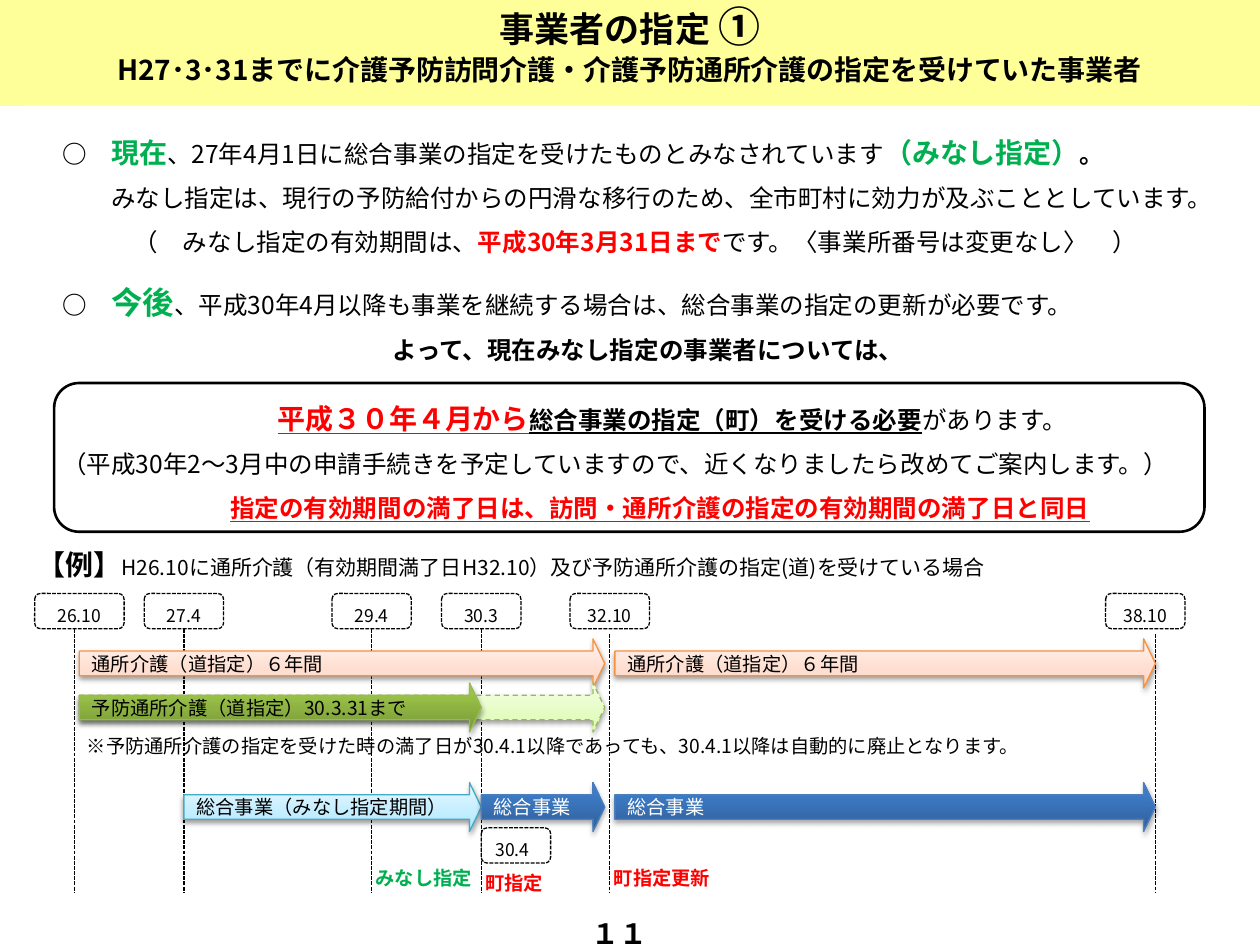
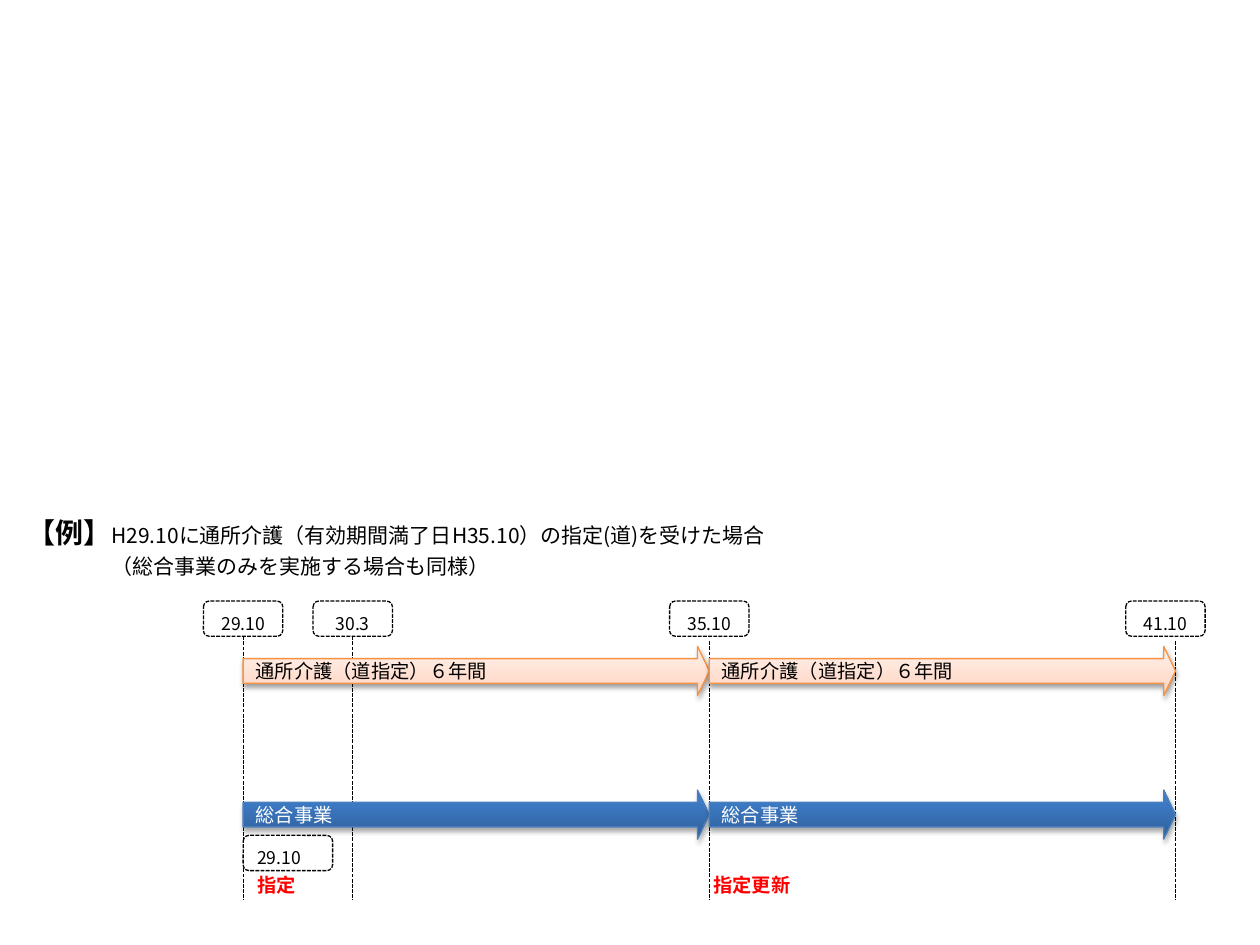
import copy
import dataclasses

import lxml.etree
import pptx
import pptx.dml.color
import pptx.enum.dml
import pptx.enum.shapes
import pptx.enum.text
import pptx.oxml.ns
import pptx.util


@dataclasses.dataclass(frozen=True)
class Theme:
    font: str = "Noto Sans CJK JP"
    page_font: str = "Calibri"
    black: str = "000000"
    white: str = "FFFFFF"
    red: str = "FF0000"
    green: str = "00B050"
    band: str = "FFFF99"
    title: int = 20
    circled: int = 24
    strong: int = 18
    lead: int = 16
    body: int = 14
    example: int = 12
    label: int = 11
    date: int = 10
    title_line: int = 20
    body_line: int = 25
    label_line: int = 17


THEME = Theme()


@dataclasses.dataclass(frozen=True)
class Span:
    text: str
    size: float = THEME.body
    colour: str = THEME.black
    bold: bool = False
    underline: bool = False
    font: str = THEME.font


@dataclasses.dataclass(frozen=True)
class Para:
    spans: tuple
    line: float = None
    centred: bool = False
    indent: float = 0
    before: float = 0


@dataclasses.dataclass(frozen=True)
class Milestone:
    text: str
    x: float
    box_shift: float = 0
    box_width: float = 0.63
    line_top: float = 0.28


@dataclasses.dataclass(frozen=True)
class ArrowStyle:
    stops: tuple
    outline: str
    text: str = THEME.black
    dashed: bool = False
    shadow: tuple = (38, 1.6)


PALE = (0, 0.35, 1)
DEEP = (0, 0.8, 1)
ARROW_STYLES = {
    "care": ArrowStyle(tuple(zip(PALE, ("FFD2BD", "FFDED0", "FFF2ED"))), "F69240"),
    "lapsed": ArrowStyle(tuple(zip(PALE, ("DAFDA7", "E4FCC2", "F5FFE7"))), "98B955", dashed=True),
    "prevention": ArrowStyle(tuple(zip(DEEP, ("779737", "9BC348", "9DC746"))), "98B955", shadow=(35, 1.8)),
    "deemed": ArrowStyle(tuple(zip(PALE, ("A7E6FF", "C1EDFF", "E7F8FF"))), "46AAC5"),
    "project": ArrowStyle(tuple(zip(DEEP, ("2F5F99", "3D7CC7", "3A7CCB"))), "4B7EBC", THEME.white, shadow=(35, 1.8)),
}

ROWS = {"care": 0.36, "prevention": 0.71, "note": 1.03, "project": 1.5, "start": 1.86, "label": 2.09}
LINE_END = 2.37
DATE_HEIGHT = 0.28
ARROW_HEIGHT = 0.39
GAP = 0.04
CARE = "通所介護（道指定）６年間"
PROJECT = "総合事業"

TITLE = [
    Para((Span("事業者の指定 ", THEME.title, bold=True), Span("①", THEME.circled, bold=True)),
         THEME.title_line, True),
    Para((Span("H27･3･31までに介護予防訪問介護・介護予防通所介護の指定を受けていた事業者", THEME.lead, bold=True),),
         THEME.title_line, True),
]

BODY = [
    Para((Span("○　", bold=True),
          Span("現在", THEME.lead, THEME.green, True),
          Span("、27年4月1日に総合事業の指定を受けたものとみなされています"),
          Span("（みなし指定）", THEME.lead, THEME.green, True),
          Span("。", bold=True)), THEME.body_line, indent=14),
    Para((Span("みなし指定は、現行の予防給付からの円滑な移行のため、全市町村に効力が及ぶこととしています。"),),
         THEME.body_line, indent=42),
    Para((Span("（　みなし指定の有効期間は、"),
          Span("平成30年3月31日まで", colour=THEME.red, bold=True),
          Span("です。〈事業所番号は変更なし〉　）")), THEME.body_line, True),
    Para((Span("○　", bold=True),
          Span("今後", THEME.strong, THEME.green, True),
          Span("、平成30年4月以降も事業を継続する場合は、総合事業の指定の更新が必要です。")),
         THEME.body_line, indent=14, before=12),
    Para((Span("よって、現在みなし指定の事業者については、", bold=True),), THEME.body_line, True, 14),
    Para((Span("平成３０年４月から", THEME.lead, THEME.red, True, True),
          Span("総合事業の指定（町）を受ける必要", bold=True, underline=True),
          Span("があります。")), THEME.body_line, True, 42, 15),
    Para((Span("（平成30年2～3月中の申請手続きを予定していますので、近くなりましたら改めてご案内します。）"),),
         THEME.body_line, indent=14),
    Para((Span("指定の有効期間の満了日は、訪問・通所介護の指定の有効期間の満了日と同日",
               colour=THEME.red, bold=True, underline=True),), THEME.body_line, True, 28),
]

EXAMPLE_MARK = Span("【例】", THEME.lead, bold=True)

EXISTING = {
    "top": 4.71,
    "heading_place": (0.2, 4.38, 9.37, 0.22),
    "heading": [Para((EXAMPLE_MARK,
                      Span("H26.10に通所介護（有効期間満了日H32.10）及び予防通所介護の指定(道)を受けている場合",
                           THEME.example)), THEME.label_line)],
    "milestones": [
        Milestone("26.10", 0.59, 0.04, 0.71),
        Milestone("27.4", 1.46),
        Milestone("29.4", 2.95),
        Milestone("30.3", 3.82),
        Milestone("32.10", 4.84, line_top=0.32),
        Milestone("38.10", 9.17, -0.08, line_top=0.32),
    ],
    "arrows": [
        ("care", "care", "26.10", "32.10", GAP, GAP, CARE),
        ("prevention", "lapsed", "26.10", "32.10", GAP, GAP, ""),
        ("prevention", "prevention", "26.10", "30.3", GAP, 0, "予防通所介護（道指定）30.3.31まで"),
        ("project", "deemed", "27.4", "30.3", 0, 0, "総合事業（みなし指定期間）"),
        ("project", "project", "30.3", "32.10", 0, GAP, PROJECT),
        ("care", "care", "32.10", "38.10", GAP, 0, CARE),
        ("project", "project", "32.10", "38.10", GAP, 0, PROJECT),
    ],
    "start": ("30.4", "30.3", 0.55),
    "labels": [
        ("みなし指定", "29.4", -0.08, 0, 1.05, THEME.green),
        ("町指定", "30.3", -0.08, 0.04, 0.79, THEME.red),
        ("町指定更新", "32.10", -0.08, 0, 1.02, THEME.red),
    ],
    "note": "※予防通所介護の指定を受けた時の満了日が30.4.1以降であっても、30.4.1以降は自動的に廃止となります。",
}

NEWCOMER = {
    "top": 4.77,
    "heading_place": (0.12, 4.06, 9.37, 0.59),
    "heading": [
        Para((EXAMPLE_MARK,
              Span("H29.10に通所介護（有効期間満了日H35.10）の指定(道)を受けた場合", THEME.example)), THEME.label_line),
        Para((Span("（総合事業のみを実施する場合も同様）", THEME.example),), THEME.label_line, indent=48),
    ],
    "milestones": [
        Milestone("29.10", 1.93),
        Milestone("30.3", 2.8),
        Milestone("35.10", 5.63, line_top=0.32),
        Milestone("41.10", 9.33, -0.08, line_top=0.32),
    ],
    "arrows": [(row, row, start, end, 0, 0, text)
               for start, end in (("29.10", "35.10"), ("35.10", "41.10"))
               for row, text in (("care", CARE), ("project", PROJECT))],
    "start": ("29.10", "29.10", 0.71),
    "labels": [
        ("指定", "29.10", 0, 0, 0.55, THEME.red),
        ("指定更新", "35.10", -0.08, 0, 0.87, THEME.red),
    ],
    "note": "",
}

SHAPE = pptx.enum.shapes.MSO_SHAPE
DASH = pptx.enum.dml.MSO_LINE


def rgb(colour):
    return pptx.dml.color.RGBColor.from_string(colour)


def inches(lengths):
    return [pptx.util.Inches(length) for length in lengths]


def write(box, paras):
    frame = box.text_frame
    frame.word_wrap = True
    frame.vertical_anchor = pptx.enum.text.MSO_ANCHOR.MIDDLE
    for number, para in enumerate(paras):
        target = frame.add_paragraph() if number else frame.paragraphs[0]
        align = pptx.enum.text.PP_ALIGN
        target.alignment = align.CENTER if para.centred else align.LEFT
        if para.line:
            target.line_spacing = pptx.util.Pt(para.line)
        if para.before:
            target.space_before = pptx.util.Pt(para.before)
        if para.indent:
            target._p.get_or_add_pPr().set("marL", str(pptx.util.Pt(para.indent)))
        for span in para.spans:
            run = target.add_run()
            run.text = span.text
            font = run.font
            font.name = span.font
            font.size = pptx.util.Pt(span.size)
            font.bold = span.bold
            font.underline = span.underline
            font.color.rgb = rgb(span.colour)
            east_asian = lxml.etree.Element(pptx.oxml.ns.qn("a:ea"), typeface=THEME.font)
            font._element.find(pptx.oxml.ns.qn("a:latin")).addnext(east_asian)


def set_line(line, colour, width=0.75, dash=None):
    line.color.rgb = rgb(colour)
    line.width = pptx.util.Pt(width)
    if dash:
        line.dash_style = dash


def add_box(page, place, paras=(), fill=None, line=None, corner=None):
    box = page.shapes.add_shape(SHAPE.ROUNDED_RECTANGLE, *inches(place))
    box.shadow.inherit = False
    if corner is not None:
        box.adjustments[0] = corner
    if fill:
        box.fill.solid()
        box.fill.fore_color.rgb = rgb(fill)
    else:
        box.fill.background()
    if line:
        set_line(box.line, *line)
    else:
        box.line.fill.background()
    write(box, paras)


def add_date(page, place, text, centred):
    add_box(page, place, [Para((Span(text, THEME.date),), THEME.label_line, centred)],
            THEME.white, (THEME.black, 0.75, DASH.SQUARE_DOT))


def add_arrow(page, place, style, text):
    arrow = page.shapes.add_shape(SHAPE.RIGHT_ARROW, *inches(place))
    arrow.adjustments[0], arrow.adjustments[1] = 0.5, 0.24
    properties = arrow._element.spPr
    arrow.fill.gradient()
    arrow.fill.gradient_angle = 90
    stop_list = properties.find(".//" + pptx.oxml.ns.qn("a:gsLst"))
    stop_list.append(copy.deepcopy(stop_list[-1]))
    for stop, (position, colour) in zip(arrow.fill.gradient_stops, style.stops):
        stop.position = position
        stop.color.rgb = rgb(colour)
    set_line(arrow.line, style.outline, dash=DASH.DASH if style.dashed else None)
    arrow.shadow.inherit = False
    effects = properties.find(pptx.oxml.ns.qn("a:effectLst"))
    opacity, distance = style.shadow
    shadow = lxml.etree.SubElement(
        effects, pptx.oxml.ns.qn("a:outerShdw"), blurRad=str(pptx.util.Pt(3.1)),
        dist=str(pptx.util.Pt(distance)), dir="5400000", rotWithShape="0")
    tint = lxml.etree.SubElement(shadow, pptx.oxml.ns.qn("a:srgbClr"), val=THEME.black)
    lxml.etree.SubElement(tint, pptx.oxml.ns.qn("a:alpha"), val=str(opacity * 1000))
    if text:
        write(arrow, [Para((Span(text, THEME.label, style.text),))])


def add_timeline(page, plan):
    top = plan["top"]
    xs = {stone.text: stone.x for stone in plan["milestones"]}
    for stone in plan["milestones"]:
        line = page.shapes.add_connector(
            pptx.enum.shapes.MSO_CONNECTOR.STRAIGHT,
            *inches((stone.x, top + stone.line_top, stone.x, top + LINE_END)))
        set_line(line.line, THEME.black, dash=DASH.SQUARE_DOT)
        lxml.etree.SubElement(line._element.spPr, pptx.oxml.ns.qn("a:effectLst"))
    for row, style, start, end, inset, outset, text in plan["arrows"]:
        left = xs[start] + inset
        place = (left, top + ROWS[row], xs[end] - outset - left, ARROW_HEIGHT)
        add_arrow(page, place, ARROW_STYLES[style], text)
    for stone in plan["milestones"]:
        left = stone.x + stone.box_shift - stone.box_width / 2
        add_date(page, (left, top, stone.box_width, DATE_HEIGHT), stone.text, True)
    text, at, width = plan["start"]
    add_date(page, (xs[at], top + ROWS["start"], width, DATE_HEIGHT), text, False)
    for text, at, shift, drop, width, colour in plan["labels"]:
        add_box(page, (xs[at] + shift, top + ROWS["label"] + drop, width, DATE_HEIGHT),
                [Para((Span(text, THEME.label, colour, True),), THEME.label_line)])
    if plan["note"]:
        first, last = min(xs.values()), max(xs.values())
        add_box(page, (first, top + ROWS["note"], last - first, 0.31),
                [Para((Span(plan["note"], THEME.label),), THEME.label_line)], corner=0)
    add_box(page, plan["heading_place"], plan["heading"], THEME.white, corner=0)


def main():
    deck = pptx.Presentation()
    deck.slide_width, deck.slide_height = inches((10, 7.5))
    blank = deck.slide_layouts[6]

    page = deck.slides.add_slide(blank)
    add_box(page, (0, -0.03, 10, 0.87), TITLE, THEME.band, corner=0)
    add_box(page, (0.2, 0.84, 9.69, 3.46), BODY, THEME.white, corner=0)
    add_box(page, (0.43, 3.04, 9.13, 1.18), line=(THEME.black, 1.5))
    add_timeline(page, EXISTING)
    number = page.shapes.add_textbox(*inches((3.75, 7.21, 2.33, 0.4)))
    write(number, [Para((Span("１１", THEME.lead, bold=True, font=THEME.page_font),), centred=True)])

    add_timeline(deck.slides.add_slide(blank), NEWCOMER)
    deck.save("out.pptx")


if __name__ == "__main__":
    main()
